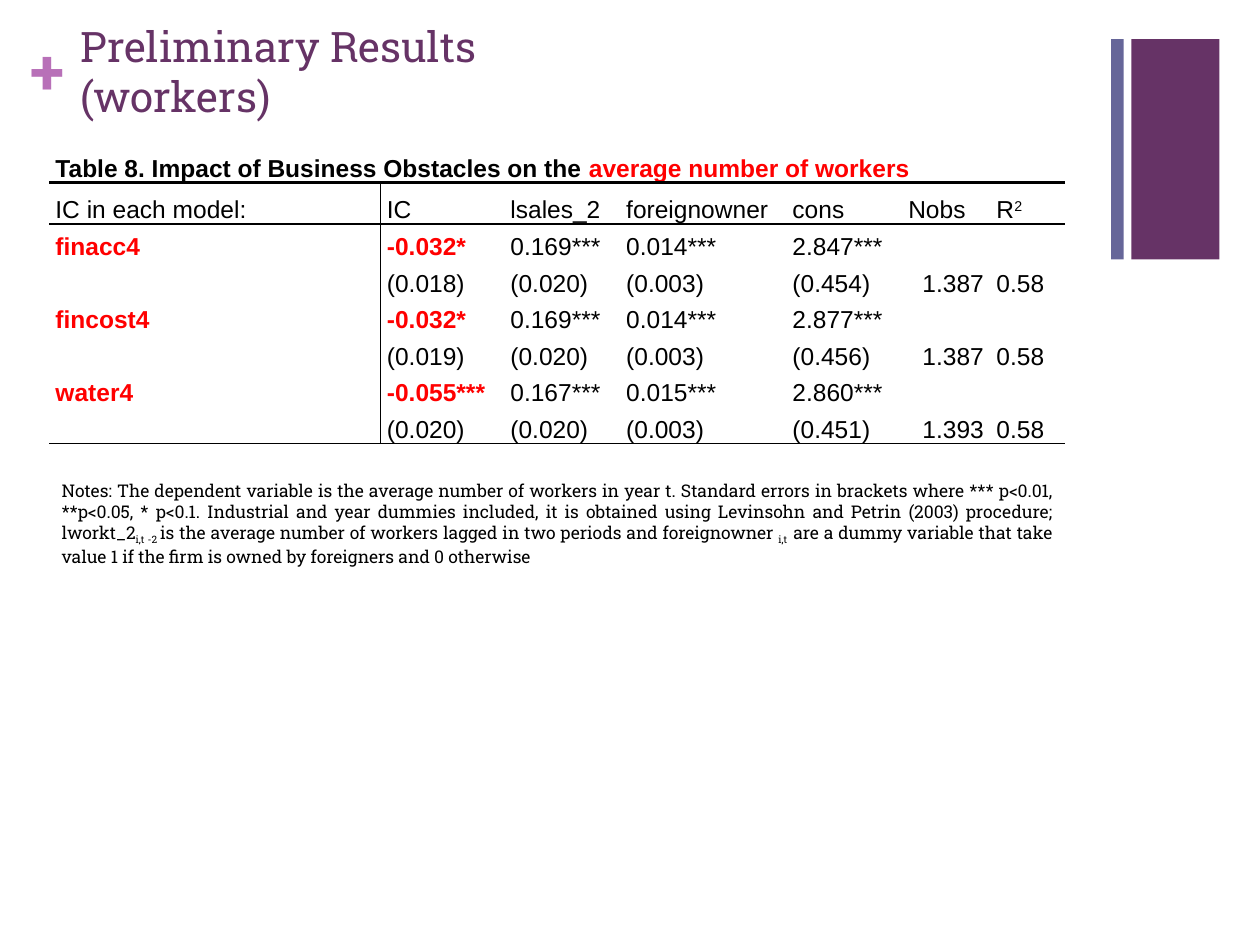
from dataclasses import dataclass

from lxml import etree
from pptx import Presentation
from pptx.dml.color import RGBColor
from pptx.enum.shapes import MSO_SHAPE
from pptx.enum.text import MSO_ANCHOR, PP_ALIGN
from pptx.oxml.ns import qn
from pptx.util import Pt

RECTANGLE = MSO_SHAPE.RECTANGLE
TOP, BOTTOM = MSO_ANCHOR.TOP, MSO_ANCHOR.BOTTOM
LEFT, RIGHT, JUSTIFY = PP_ALIGN.LEFT, PP_ALIGN.RIGHT, PP_ALIGN.JUSTIFY


@dataclass(frozen=True)
class Theme:
    plum: str = "663366"
    orchid: str = "B870B8"
    slate: str = "666699"
    ink: str = "000000"
    alert: str = "FF0000"
    heading_font: str = "Roboto Slab"
    table_font: str = "Arial"
    plus_size: int = 36
    title_size: int = 24
    table_size: int = 14
    small_size: int = 10
    heavy_rule: float = 1.5
    light_rule: float = 1


THEME = Theme()

COLUMN_WIDTHS = [189.4, 70.6, 66.2, 95, 66.2, 50.4, 42.5]
ROW_HEIGHTS = [17.3, 23.8] + [20.9] * 6
CAPTION = ["Table 8. Impact of Business Obstacles on the ", "average number of workers"]
HEADINGS = ["IC in each model:", "IC", "lsales_2", "foreignowner", "cons", "Nobs", "R"]
MODELS = [
    ["finacc4", "-0.032*", "0.169***", "0.014***", "2.847***", "", ""],
    ["", "(0.018)", "(0.020)", "(0.003)", "(0.454)", "1.387", "0.58"],
    ["fincost4", "-0.032*", "0.169***", "0.014***", "2.877***", "", ""],
    ["", "(0.019)", "(0.020)", "(0.003)", "(0.456)", "1.387", "0.58"],
    ["water4", "-0.055***", "0.167***", "0.015***", "2.860***", "", ""],
    ["", "(0.020)", "(0.020)", "(0.003)", "(0.451)", "1.393", "0.58"],
]
NOBS_COLUMN = 5
FOOTNOTE = [
    ("Notes: The dependent variable is the average number of workers in year t. "
     "Standard errors in brackets where *** p<0.01, **p<0.05, * p<0.1. Industrial "
     "and year dummies included, it is obtained using Levinsohn and Petrin (2003) "
     "procedure; lworkt_2", 0),
    ("i,t -2 ", -25),
    ("is the average number of workers lagged in two periods and foreignowner ", 0),
    ("i,t  ", -25),
    ("are a dummy variable that take value 1 if the firm is owned by foreigners "
     "and 0 otherwise", 0),
]


def add_text(paragraph, text, font_name, size, color, bold=False, baseline=0):
    run = paragraph.add_run()
    run.text = text
    run.font.name = font_name
    run.font.size = Pt(size)
    run.font.bold = bold
    run.font.color.rgb = RGBColor.from_string(color)
    if baseline:
        run.font._element.set("baseline", str(baseline * 1000))


def add_text_frame(slide, left, top, width, height, wrap=True):
    frame = slide.shapes.add_textbox(Pt(left), Pt(top), Pt(width), Pt(height)).text_frame
    frame.word_wrap = wrap
    frame.vertical_anchor = TOP
    return frame


def add_side_bars(slide, left, top, width, height):
    slate_width, plum_width = 7.2, 50.4
    bars = [(left, slate_width, THEME.slate),
            (left + width - plum_width, plum_width, THEME.plum)]
    for bar_left, bar_width, color in bars:
        bar = slide.shapes.add_shape(RECTANGLE, Pt(bar_left), Pt(top), Pt(bar_width), Pt(height))
        bar.shadow.inherit = False
        bar.fill.solid()
        bar.fill.fore_color.rgb = RGBColor.from_string(color)
        bar.line.fill.background()


def add_heading(slide, left, top, width, height):
    plus = add_text_frame(slide, left, top + 10.1, 20.9, 43.9, wrap=False)
    plus.margin_left = plus.margin_right = plus.margin_top = plus.margin_bottom = 0
    add_text(plus.paragraphs[0], "+", THEME.heading_font, THEME.plus_size, THEME.orchid, bold=True)
    title_offset = 21.6
    title = add_text_frame(slide, left + title_offset, top, width - title_offset, height)
    add_text(title.paragraphs[0], "Preliminary Results (workers)", THEME.heading_font,
             THEME.title_size, THEME.plum)


def set_borders(cell, rules):
    properties = cell._tc.get_or_add_tcPr()
    for position, side in enumerate("LRTB"):
        border = etree.Element(qn(f"a:ln{side}"))
        if side in rules:
            border.set("w", str(Pt(rules[side])))
            fill = etree.SubElement(border, qn("a:solidFill"))
            etree.SubElement(fill, qn("a:srgbClr"), val=THEME.ink)
        else:
            etree.SubElement(border, qn("a:noFill"))
        properties.insert(position, border)


def rules_for(row, column):
    rules = {}
    if row in (0, 1):
        rules["B"] = THEME.heavy_rule
    if row in (1, 2):
        rules["T"] = THEME.heavy_rule
    if row == len(ROW_HEIGHTS) - 1:
        rules["B"] = THEME.light_rule
    if row > 0 and column < 2:
        rules["RL"[column]] = THEME.light_rule
    return rules


def fill_cell(cell, parts, alignment=LEFT, line_spacing=1.15):
    cell.fill.background()
    cell.vertical_anchor = BOTTOM
    cell.margin_left = cell.margin_right = Pt(3.6)
    cell.margin_top = cell.margin_bottom = 0
    paragraph = cell.text_frame.paragraphs[0]
    paragraph.alignment = alignment
    paragraph.line_spacing = line_spacing
    for text, color, bold, baseline in parts:
        add_text(paragraph, text, THEME.table_font, THEME.table_size, color, bold, baseline)
    if not parts:
        etree.SubElement(paragraph._p, qn("a:endParaRPr"), sz=str(THEME.table_size * 100))


def add_results_table(slide, left, top, width, height):
    table = slide.shapes.add_table(len(ROW_HEIGHTS), len(COLUMN_WIDTHS),
                                   Pt(left), Pt(top), Pt(width), Pt(height)).table
    table.first_row = table.horz_banding = False
    for column, column_width in zip(table.columns, COLUMN_WIDTHS):
        column.width = Pt(column_width)
    for row, row_height in zip(table.rows, ROW_HEIGHTS):
        row.height = Pt(row_height)

    caption, *others = table.rows[0].cells
    caption.merge(others[-1])
    fill_cell(caption, [(CAPTION[0], THEME.ink, True, 0), (CAPTION[1], THEME.alert, True, 0)])
    for cell in others:
        fill_cell(cell, [])

    for column, heading in enumerate(HEADINGS):
        parts = [(heading, THEME.ink, False, 0)]
        if heading == "R":
            parts.append(("2", THEME.ink, False, 30))
        if column == 0:
            fill_cell(table.cell(1, column), parts, JUSTIFY, 1)
        else:
            fill_cell(table.cell(1, column), parts)

    for row, values in enumerate(MODELS, start=2):
        for column, value in enumerate(values):
            highlighted = bool(values[0]) and column < 2
            color = THEME.alert if highlighted else THEME.ink
            parts = [(value, color, highlighted, 0)] if value else []
            fill_cell(table.cell(row, column), parts, RIGHT if column == NOBS_COLUMN else LEFT)

    for row in range(len(ROW_HEIGHTS)):
        for column in range(len(COLUMN_WIDTHS)):
            set_borders(table.cell(row, column), rules_for(row, column))


def add_footnote(slide, left, top, width, height):
    paragraph = add_text_frame(slide, left, top, width, height).paragraphs[0]
    paragraph.alignment = JUSTIFY
    for text, baseline in FOOTNOTE:
        add_text(paragraph, text, THEME.heading_font, THEME.small_size, THEME.ink,
                 baseline=baseline)


def main():
    presentation = Presentation()
    presentation.slide_width, presentation.slide_height = Pt(720), Pt(540)
    slide = presentation.slides.add_slide(presentation.slide_layouts[6])
    add_side_bars(slide, 635, 22.3, 61.9, 126)
    add_heading(slide, 17.3, 7.9, 307.4, 42.5)
    add_results_table(slide, 28.1, 85, sum(COLUMN_WIDTHS), sum(ROW_HEIGHTS))
    add_footnote(slide, 28.1, 270.7, 580.3, 55.4)
    presentation.save("out.pptx")


if __name__ == "__main__":
    main()
